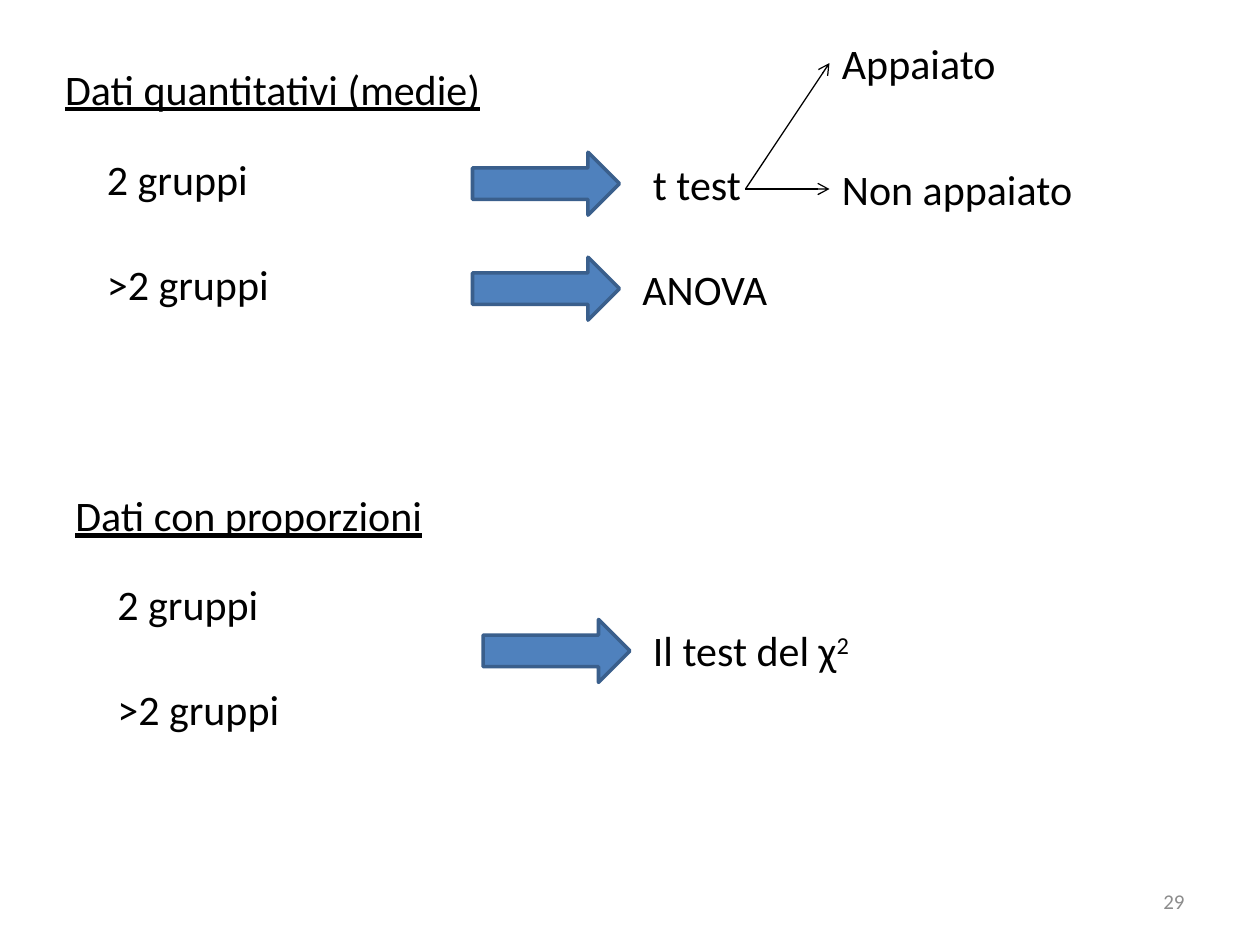
import pptx
import pptx.util
import pptx.dml.color
import pptx.enum.shapes
import pptx.enum.text
import pptx.oxml
import pptx.oxml.ns

Pt = pptx.util.Pt
ALIGN = pptx.enum.text.PP_ALIGN
BLACK = pptx.dml.color.RGBColor(0x00, 0x00, 0x00)
GREY = pptx.dml.color.RGBColor(0x8C, 0x8C, 0x8C)
BLUE = pptx.dml.color.RGBColor(0x4F, 0x81, 0xBD)
DARK_BLUE = pptx.dml.color.RGBColor(0x3A, 0x5F, 0x8C)
ROW_H = 36


def write(sp, text, size=24, color=BLACK, align=ALIGN.LEFT, underline=None):
    tf = sp.text_frame
    tf.word_wrap = True
    tf.auto_size = pptx.enum.text.MSO_AUTO_SIZE.NONE
    tf.vertical_anchor = pptx.enum.text.MSO_ANCHOR.MIDDLE
    p = tf.paragraphs[0]
    p.text = text
    p.alignment = align
    p.font.name = "Calibri"
    p.font.size = Pt(size)
    p.font.color.rgb = color
    p.font.underline = underline
    return p


def add_text(left, top, width, height, text, **style):
    sp = s.shapes.add_textbox(Pt(left), Pt(top), Pt(width), Pt(height))
    return write(sp, text, **style)


prs = pptx.Presentation()
prs.slide_width, prs.slide_height = Pt(720), Pt(540)
s = prs.slides.add_slide(prs.slide_layouts[5])

# Section headings
title = s.shapes.title
title.left, title.top, title.width, title.height = Pt(30), Pt(32.4), Pt(600), Pt(ROW_H)
write(title, "Dati quantitativi (medie)", underline=True)
add_text(36, 276, 600, ROW_H, "Dati con proporzioni", underline=True)

# Groups under each heading
for left, top in ((54, 84), (60, 327)):
    for i, label in enumerate(("2 gruppi", ">2 gruppi")):
        add_text(left, top + 60 * i, 132, ROW_H, label)

# Block arrows towards the tests
for left, top in ((270, 87), (270, 147), (276, 354)):
    sp = s.shapes.add_shape(pptx.enum.shapes.MSO_SHAPE.RIGHT_ARROW,
                            Pt(left), Pt(top), Pt(84), Pt(ROW_H))
    sp.shadow.inherit = False
    sp.fill.solid()
    sp.fill.fore_color.rgb = BLUE
    sp.line.color.rgb = DARK_BLUE
    sp.line.width = Pt(2)

# Tests
add_text(366, 87, 132, ROW_H, "t test")
add_text(360, 147, 132, ROW_H, "ANOVA")
p = add_text(366, 353.5, 132, ROW_H, "Il test del χ")
r = p.add_run()
r.text = "2"
r.font._element.set("baseline", "30000")

# Branches of the t test: label and thin arrow
for label, top, end_y in (("Appaiato", 18, 36), ("Non appaiato", 90, 108)):
    add_text(474, top, 198, ROW_H, label)
    line = s.shapes.add_connector(pptx.enum.shapes.MSO_CONNECTOR.STRAIGHT,
                                  Pt(426), Pt(108), Pt(474), Pt(end_y))
    line.line.color.rgb = BLACK
    line.line.width = Pt(0.75)
    ln = line.line._get_or_add_ln()
    ln.append(pptx.oxml.parse_xml(
        f'<a:tailEnd {pptx.oxml.ns.nsdecls("a")} type="arrow"/>'))
    ln.addnext(pptx.oxml.parse_xml(f'<a:effectLst {pptx.oxml.ns.nsdecls("a")}/>'))

# Slide number
add_text(516, 500.5, 168, 28.75, "29", size=12, color=GREY, align=ALIGN.RIGHT)

prs.save("out.pptx")
